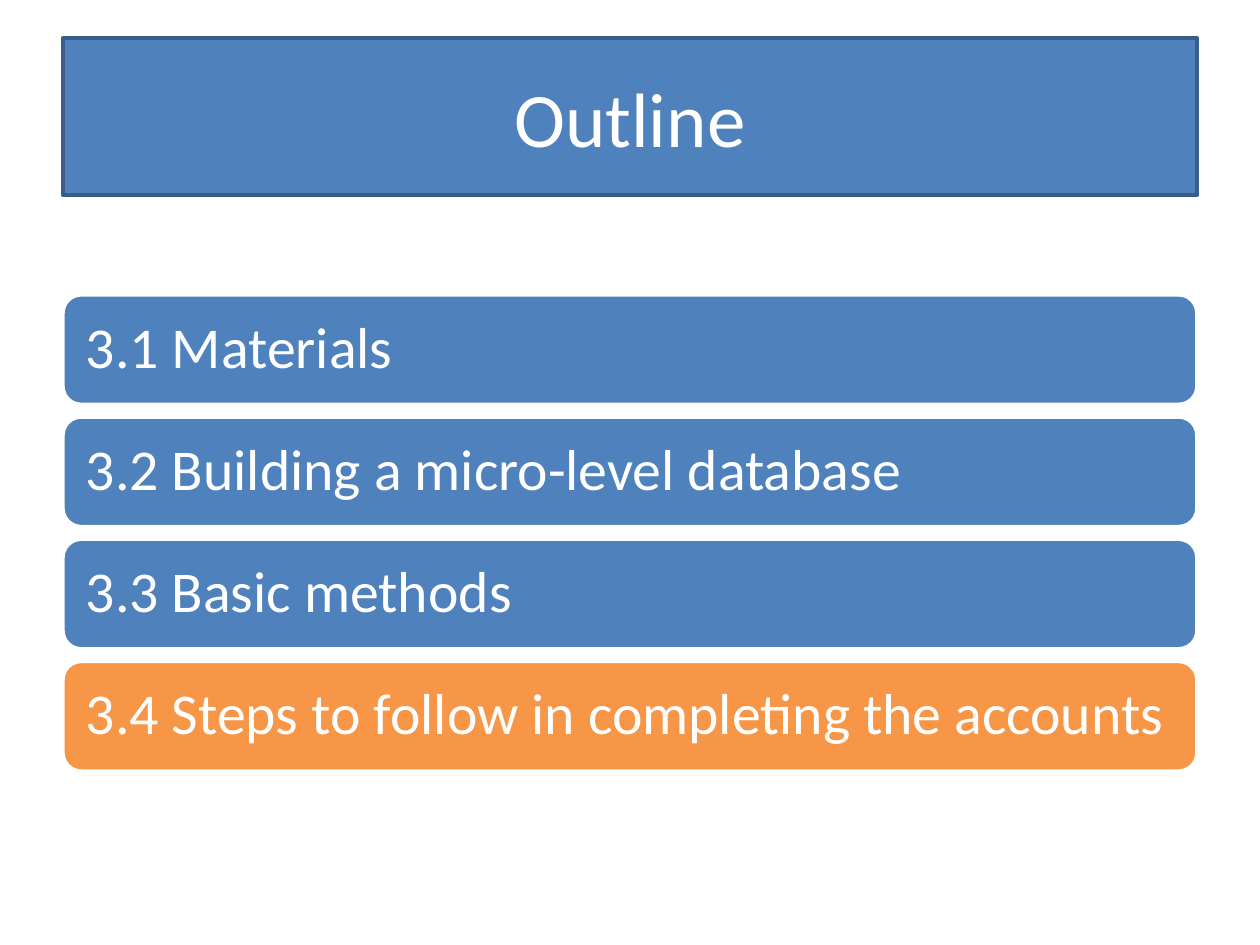
from pptx import Presentation
from pptx.dml.color import RGBColor
from pptx.enum.shapes import MSO_SHAPE
from pptx.enum.text import MSO_ANCHOR, PP_ALIGN
from pptx.util import Inches, Pt

RECTANGLE, ROUNDED = MSO_SHAPE.RECTANGLE, MSO_SHAPE.ROUNDED_RECTANGLE
LEFT, CENTER = PP_ALIGN.LEFT, PP_ALIGN.CENTER
MIDDLE = MSO_ANCHOR.MIDDLE

BLUE = RGBColor(0x4F, 0x81, 0xBD)
DARK_BLUE = RGBColor(0x38, 0x5D, 0x8A)
ORANGE = RGBColor(0xF7, 0x96, 0x46)
WHITE = RGBColor(0xFF, 0xFF, 0xFF)

# Content: the current section is highlighted
TITLE = "Outline"
SECTIONS = [
    "3.1 Materials",
    "3.2 Building a micro-level database",
    "3.3 Basic methods",
    "3.4 Steps to follow in completing the accounts",
]
CURRENT_SECTION = SECTIONS[3]

# Layout in inches
MARGIN, WIDTH = 0.5, 9
TITLE_TOP, TITLE_HEIGHT = 0.3, 1.25
BARS_TOP, BAR_HEIGHT, BAR_PITCH = 2.34, 0.87, 0.97


def add_bar(slide, kind, top, height, fill, outline):
    bar = slide.shapes.add_shape(
        kind, Inches(MARGIN), Inches(top), Inches(WIDTH), Inches(height))
    bar.shadow.inherit = False
    bar.fill.solid()
    bar.fill.fore_color.rgb = fill
    bar.line.color.rgb = outline
    bar.line.width = Pt(2)
    return bar


def write(bar, text, *, size, align=LEFT, inset=0.1, spacing=1.0):
    frame = bar.text_frame
    frame.word_wrap = True
    frame.vertical_anchor = MIDDLE
    frame.margin_left = frame.margin_right = Inches(inset)
    frame.margin_top = frame.margin_bottom = Inches(inset)
    paragraph = frame.paragraphs[0]
    paragraph.alignment = align
    paragraph.line_spacing = spacing
    run = paragraph.add_run()
    run.text = text
    run.font.name = "Calibri"
    run.font.size = Pt(size)
    run.font.color.rgb = WHITE


prs = Presentation()
prs.slide_width, prs.slide_height = Inches(10), Inches(7.5)
slide = prs.slides.add_slide(prs.slide_layouts[6])

# Title banner
banner = add_bar(slide, RECTANGLE, TITLE_TOP, TITLE_HEIGHT, BLUE, DARK_BLUE)
write(banner, TITLE, size=44, align=CENTER)

# Section bars
for index, section in enumerate(SECTIONS):
    fill = ORANGE if section == CURRENT_SECTION else BLUE
    section_bar = add_bar(slide, ROUNDED, BARS_TOP + index * BAR_PITCH,
                          BAR_HEIGHT, fill, WHITE)
    write(section_bar, section, size=33, inset=0.14, spacing=0.9)

prs.save("out.pptx")
